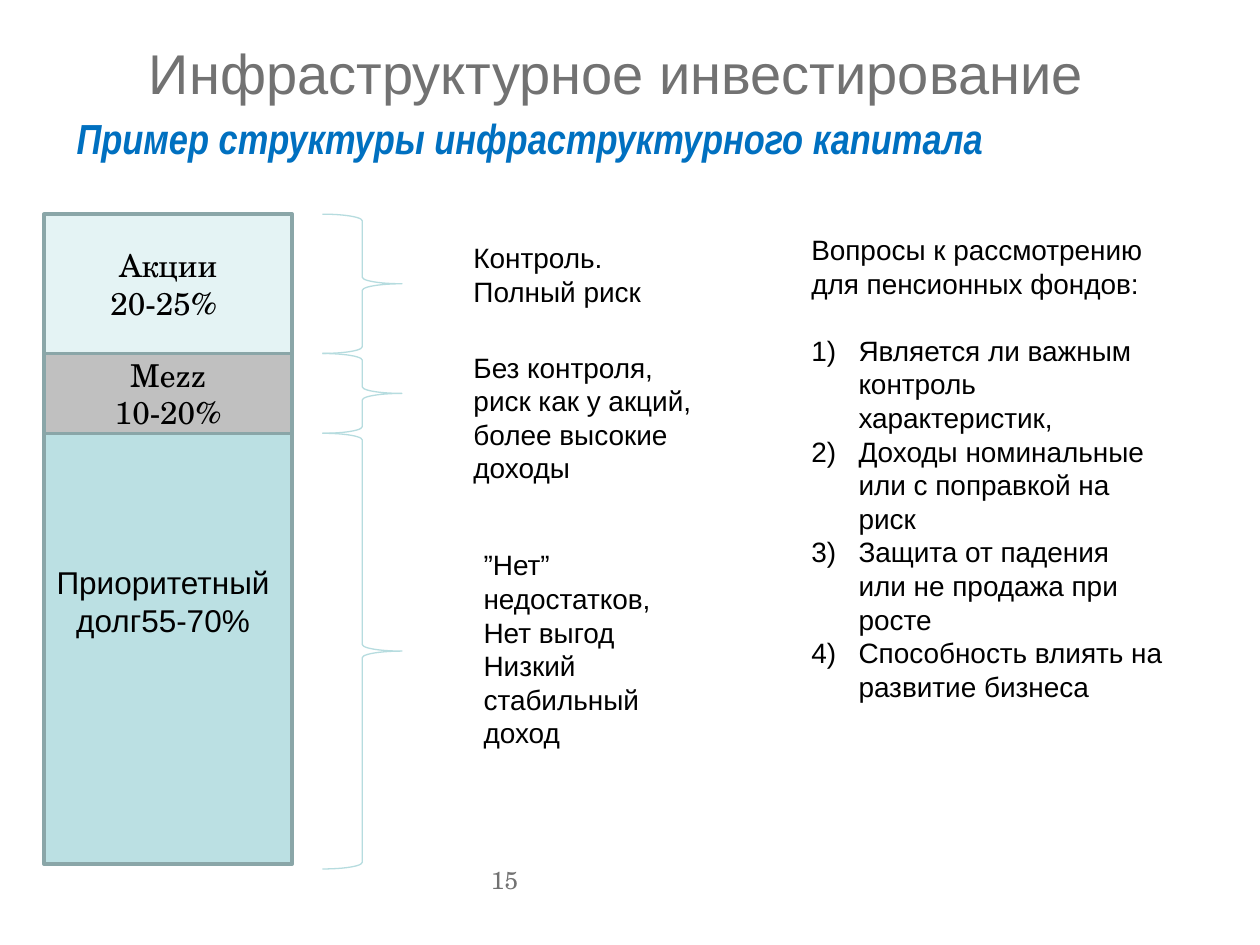
import pptx
import pptx.util
import pptx.dml.color
import pptx.enum.shapes
import pptx.enum.text
import pptx.oxml.ns
import lxml.etree

Pt = pptx.util.Pt
ALIGN = pptx.enum.text.PP_ALIGN
ANCHOR = pptx.enum.text.MSO_ANCHOR
SHAPE = pptx.enum.shapes.MSO_SHAPE
COLORS = {
    "text": "000000", "grey": "727272", "blue": "0070C0",
    "equity": "E4F3F4", "mezz": "C0C0C0", "debt": "BBE0E3",
    "edge": "8AA6A8", "brace": "B6DCDF",
}
SANS, NARROW, SERIF = "Arial", "Arial Narrow", "TeX Gyre Schola"


def rgb(name):
    return pptx.dml.color.RGBColor.from_string(COLORS[name])


def number(p, indent):
    pPr = p._p.get_or_add_pPr()
    pPr.set("marL", str(Pt(indent)))
    pPr.set("indent", str(-Pt(indent)))
    tag = pptx.oxml.ns.qn("a:buAutoNum")
    lxml.etree.SubElement(pPr, tag, type="arabicParenR")


def write(p, text, size=16, font=SANS, color="text", bold=False, italic=False,
          align=ALIGN.LEFT, indent=0, before=0):
    if indent:
        number(p, indent)
    p.alignment = align
    if before:
        p.space_before = Pt(before)
    r = p.add_run()
    r.text = text
    r.font.size = Pt(size)
    r.font.name = font
    r.font.bold = bold
    r.font.italic = italic
    r.font.color.rgb = rgb(color)


class Deck:
    def __init__(self, width, height):
        self.prs = pptx.Presentation()
        self.prs.slide_width, self.prs.slide_height = Pt(width), Pt(height)
        self.s = self.prs.slides.add_slide(self.prs.slide_layouts[6])

    def fill_text(self, tf, lines, **style):
        tf.word_wrap = True
        for i, line in enumerate(lines):
            p = tf.paragraphs[0] if i == 0 else tf.add_paragraph()
            write(p, line, **style)

    def text(self, box, *lines, **style):
        sp = self.s.shapes.add_textbox(*map(Pt, box))
        self.fill_text(sp.text_frame, lines, **style)
        return sp.text_frame

    def shape(self, kind, box, line, weight):
        sp = self.s.shapes.add_shape(kind, *map(Pt, box))
        sp.shadow.inherit = False
        sp.line.color.rgb = rgb(line)
        sp.line.width = Pt(weight)
        return sp

    def tier(self, box, fill, *lines):
        sp = self.shape(SHAPE.RECTANGLE, box, "edge", 2)
        sp.fill.solid()
        sp.fill.fore_color.rgb = rgb(fill)
        sp.text_frame.vertical_anchor = ANCHOR.MIDDLE
        self.fill_text(sp.text_frame, lines, size=18, font=SERIF, align=ALIGN.CENTER)

    def brace(self, box):
        self.shape(SHAPE.RIGHT_BRACE, box, "brace", 0.75).fill.background()


def main():
    deck = Deck(720, 540)
    deck.text((135.4, 491, 167.8, 37.4), "15", size=14, font=SERIF,
              color="grey", align=ALIGN.RIGHT)
    deck.text((19.4, 18.4, 674.6, 44), "Инфраструктурное инвестирование ",
              size=32, color="grey", align=ALIGN.CENTER)
    deck.text((36.7, 60.5, 584, 36), "Пример структуры инфраструктурного капитала",
              size=24, font=NARROW, color="blue", bold=True, italic=True)

    left, width = 25.2, 141.8
    equity, mezz, debt = (122.4, 79.6), (202, 45.6), (247.6, 249)
    deck.tier((left, 145.4, width, 348.5), "debt")
    deck.tier((left, equity[0], width, equity[1]), "equity", "Акции", "20-25% ")
    deck.tier((left, mezz[0], width, mezz[1]), "mezz", "Mezz", "10-20%")
    deck.text((19.4, 318.2, 147.6, 67.7), "Приоритетный долг55-70%",
              size=18, align=ALIGN.CENTER)
    for top, height in (equity, mezz, debt):
        deck.brace((184.3, top, 45.4, height))

    deck.text((263.5, 133.9, width, 46), "Контроль. Полный риск")
    deck.text((263.5, 196.6, width, 85), "Без контроля, риск как у акций, более высокие доходы")
    deck.text((269.3, 309.6, width, 123.8), "”Нет” недостатков,", "Нет выгод",
              "Низкий стабильный доход")

    tf = deck.text((456.5, 129.6, 215.3, 298),
                   "Вопросы к рассмотрению для пенсионных фондов:")
    questions = (
        "Является ли важным контроль характеристик,",
        "Доходы номинальные или с поправкой на риск",
        "Защита от падения или не продажа при росте",
        "Способность влиять на развитие бизнеса",
    )
    for i, question in enumerate(questions):
        write(tf.add_paragraph(), question, indent=27, before=0 if i else 19)
    deck.prs.save("out.pptx")


if __name__ == "__main__":
    main()
